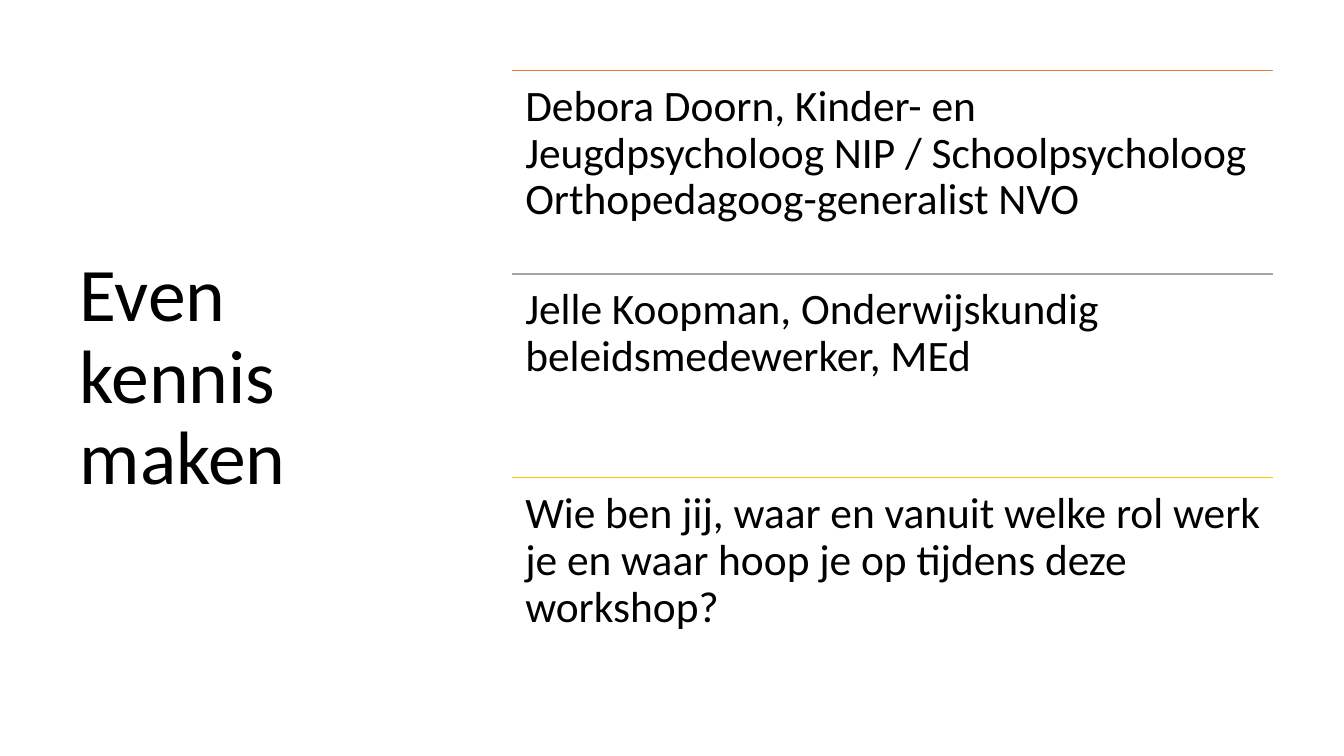
from lxml import etree
from pptx import Presentation
from pptx.dml.color import RGBColor
from pptx.enum import shapes, text
from pptx.oxml import ns
from pptx.util import Inches, Pt

FONT = "Calibri"
BLACK = "000000"
LEFT, TOP, WIDTH, ROW_HEIGHT = 5.08, 0.7, 7.55, 2.02
INTRODUCTIONS = [
    ("ED7D31", "Debora Doorn, Kinder- en Jeugdpsycholoog NIP / "
               "Schoolpsycholoog Orthopedagoog-generalist NVO"),
    ("A5A5A5", "Jelle Koopman, Onderwijskundig beleidsmedewerker, MEd"),
    ("FFC000", "Wie ben jij, waar en vanuit welke rol werk je en waar "
               "hoop je op tijdens deze workshop?"),
]


def color(value):
    return RGBColor.from_string(value)


def write(frame, words, size):
    frame.word_wrap = True
    frame.auto_size = text.MSO_AUTO_SIZE.NONE
    paragraph = frame.paragraphs[0]
    paragraph.alignment = text.PP_ALIGN.LEFT
    paragraph.line_spacing = 0.9
    run = paragraph.add_run()
    run.text = words
    run.font.name = FONT
    run.font.size = Pt(size)
    run.font.color.rgb = color(BLACK)


def add_title(slide, words):
    title = slide.shapes.title
    title.left, title.top = Inches(0.69), Inches(TOP)
    title.width, title.height = Inches(3.74), Inches(6.11)
    frame = title.text_frame
    frame.vertical_anchor = text.MSO_ANCHOR.MIDDLE
    frame.margin_right = Inches(0.4)  # keeps one word on each line
    write(frame, words, 54)


def add_rule(slide, top, line_color):
    rule = slide.shapes.add_connector(
        shapes.MSO_CONNECTOR.STRAIGHT,
        Inches(LEFT), Inches(top), Inches(LEFT + WIDTH), Inches(top))
    rule.line.color.rgb = color(line_color)
    rule.line.width = Pt(1)
    etree.SubElement(rule._element.spPr, ns.qn("a:effectLst"))


def add_introduction(slide, top, words):
    box = slide.shapes.add_textbox(
        Inches(LEFT), Inches(top), Inches(WIDTH), Inches(ROW_HEIGHT))
    frame = box.text_frame
    frame.margin_left = frame.margin_right = Inches(0.13)
    frame.margin_top = frame.margin_bottom = Inches(0.13)
    frame.vertical_anchor = text.MSO_ANCHOR.TOP
    write(frame, words, 31)


def main():
    deck = Presentation()
    deck.slide_width, deck.slide_height = Inches(13.33), Inches(7.5)
    slide = deck.slides.add_slide(deck.slide_layouts.get_by_name("Title Only"))
    add_title(slide, "Even kennis maken")
    for row, (line_color, words) in enumerate(INTRODUCTIONS):
        top = TOP + row * ROW_HEIGHT
        add_rule(slide, top, line_color)
        add_introduction(slide, top, words)
    deck.save("out.pptx")


if __name__ == "__main__":
    main()
